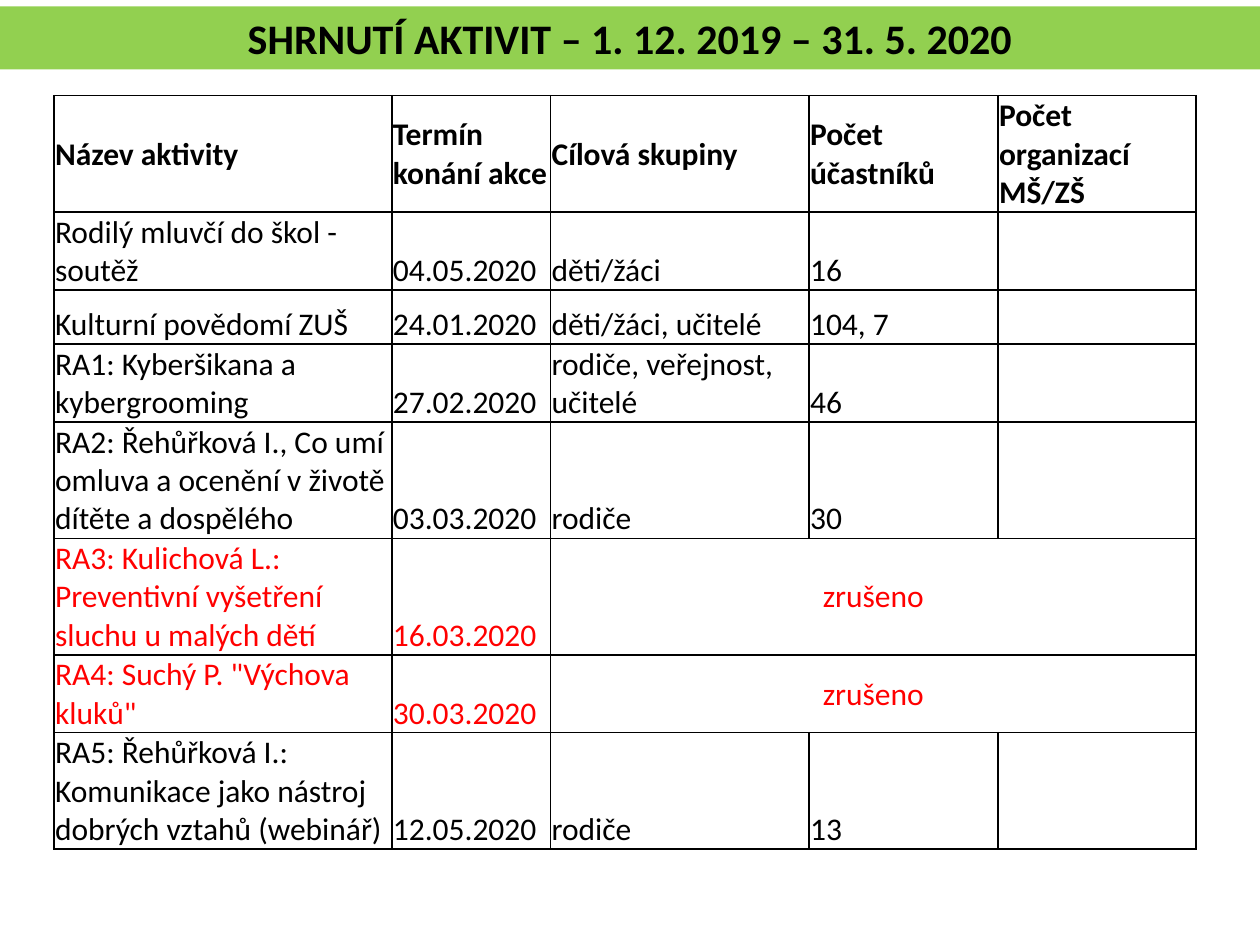
"""Build the slide that summarises the activities of December 2019 to May 2020."""
import dataclasses

import lxml.etree
import pptx
import pptx.dml.color
import pptx.enum.shapes
import pptx.enum.text
import pptx.oxml.ns
import pptx.util

Cm = pptx.util.Cm
Pt = pptx.util.Pt
RGBColor = pptx.dml.color.RGBColor
Anchor = pptx.enum.text.MSO_ANCHOR
Align = pptx.enum.text.PP_ALIGN


@dataclasses.dataclass(frozen=True)
class Theme:
    font: str = "Calibri"
    title_size: int = 24
    body_size: int = 18
    text: str = "000000"
    cancelled: str = "FF0000"
    banner: str = "92D050"
    border: str = "000000"


theme = Theme()


def write_text(text_frame, text, size, color, bold, alignment):
    paragraph = text_frame.paragraphs[0]
    paragraph.alignment = alignment
    paragraph.font.name = theme.font
    paragraph.font.size = Pt(size)
    paragraph.font.bold = bold
    paragraph.font.color.rgb = RGBColor.from_string(color)
    if text:
        paragraph.add_run().text = text


def add_borders(cell):
    properties = cell._tc.get_or_add_tcPr()
    for position, side in enumerate(("a:lnL", "a:lnR", "a:lnT", "a:lnB")):
        line = lxml.etree.Element(pptx.oxml.ns.qn(side), w=str(Pt(1)))
        fill = lxml.etree.SubElement(line, pptx.oxml.ns.qn("a:solidFill"))
        lxml.etree.SubElement(fill, pptx.oxml.ns.qn("a:srgbClr"), val=theme.border)
        properties.insert(position, line)


CANCELLED = "zrušeno"
column_widths = [6.81, 3.2, 5.21, 3.81, 3.99]
row_heights = [2.31, 1.54, 1.09, 1.54, 2.31, 2.31, 1.54, 2.31]
activities = [
    ["Název aktivity", "Termín konání akce", "Cílová skupiny", "Počet účastníků", "Počet organizací MŠ/ZŠ"],
    ["Rodilý mluvčí do škol - soutěž", "04.05.2020", "děti/žáci", "16", ""],
    ["Kulturní povědomí ZUŠ", "24.01.2020", "děti/žáci, učitelé", "104, 7", ""],
    ["RA1: Kyberšikana a kybergrooming", "27.02.2020", "rodiče, veřejnost, učitelé", "46", ""],
    ["RA2: Řehůřková I., Co umí omluva a ocenění v životě dítěte a dospělého", "03.03.2020", "rodiče", "30", ""],
    ["RA3: Kulichová L.: Preventivní vyšetření sluchu u malých dětí", "16.03.2020", CANCELLED, "", ""],
    ['RA4: Suchý P. "Výchova kluků"', "30.03.2020", CANCELLED, "", ""],
    ["RA5: Řehůřková I.: Komunikace jako nástroj dobrých vztahů (webinář)", "12.05.2020", "rodiče", "13", ""],
]

presentation = pptx.Presentation()
presentation.slide_width = Cm(25.4)
presentation.slide_height = Cm(19.05)
slide = presentation.slides.add_slide(presentation.slide_layouts[6])

table = slide.shapes.add_table(
    len(activities), len(column_widths),
    Cm(1.09), Cm(1.93), Cm(sum(column_widths)), Cm(sum(row_heights)),
).table
table.first_row = False
table.horz_banding = False
for column, width in zip(table.columns, column_widths):
    column.width = Cm(width)

for row_index, (activity, height) in enumerate(zip(activities, row_heights)):
    table.rows[row_index].height = Cm(height)
    is_header = row_index == 0
    is_cancelled = CANCELLED in activity
    color = theme.cancelled if is_cancelled else theme.text
    for column_index, text in enumerate(activity):
        cell = table.cell(row_index, column_index)
        is_notice = text == CANCELLED
        cell.fill.background()
        cell.margin_left = cell.margin_right = cell.margin_top = Cm(0.02)
        cell.margin_bottom = 0
        cell.vertical_anchor = Anchor.MIDDLE if is_header or is_notice else Anchor.BOTTOM
        alignment = Align.CENTER if is_notice else Align.LEFT
        write_text(cell.text_frame, text, theme.body_size, color, is_header, alignment)
        add_borders(cell)
    if is_cancelled:
        table.cell(row_index, 2).merge(table.cell(row_index, 4))

banner = slide.shapes.add_shape(
    pptx.enum.shapes.MSO_SHAPE.RECTANGLE, 0, Cm(0.13), presentation.slide_width, Cm(1.27)
)
banner.shadow.inherit = False
banner.fill.solid()
banner.fill.fore_color.rgb = RGBColor.from_string(theme.banner)
banner.line.fill.background()
banner.text_frame.word_wrap = True
banner.text_frame.auto_size = pptx.enum.text.MSO_AUTO_SIZE.SHAPE_TO_FIT_TEXT
banner.text_frame.vertical_anchor = Anchor.MIDDLE
write_text(
    banner.text_frame, "SHRNUTÍ AKTIVIT – 1. 12. 2019 – 31. 5. 2020",
    theme.title_size, theme.text, True, Align.CENTER,
)

presentation.save("out.pptx")
